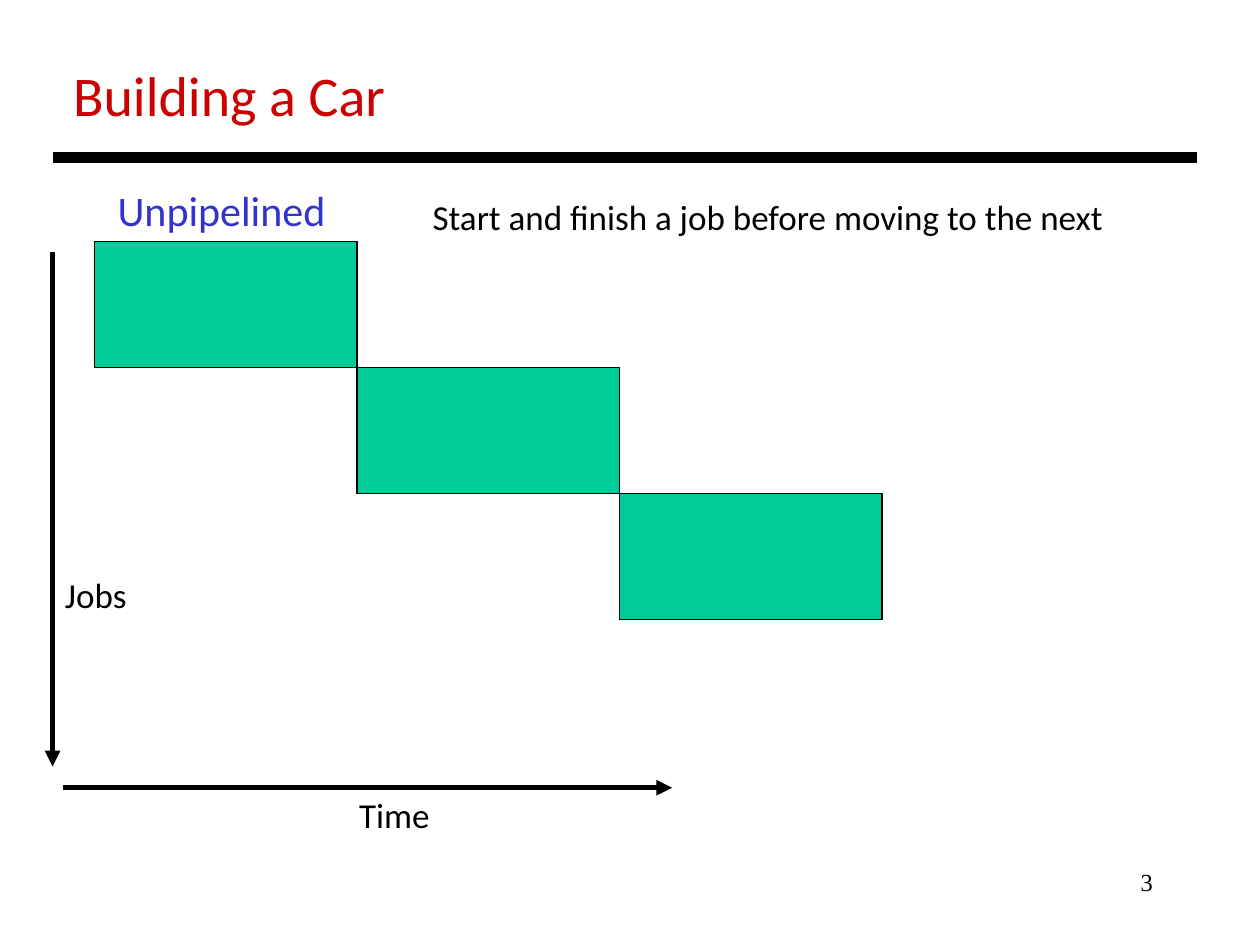
from pptx import Presentation
from pptx.dml.color import RGBColor
from pptx.enum.shapes import MSO_CONNECTOR as Link, MSO_SHAPE as Form
from pptx.enum.text import MSO_ANCHOR as Anchor, PP_ALIGN as Align
from pptx.oxml.ns import qn
from pptx.util import Cm, Pt
from lxml.etree import SubElement as add_node


def color(code):
    return RGBColor.from_string(code)


class Page:
    font = "Calibri"
    ink = "000000"
    fill = "00CC99"

    def __init__(self, slide):
        self.slide = slide
        self.shapes = slide.shapes

    def set_text(self, shape, text, size, ink=None, font=None, align=Align.LEFT, wrap=False):
        frame = shape.text_frame
        frame.text = text
        frame.word_wrap = wrap
        frame.vertical_anchor = Anchor.TOP
        para = frame.paragraphs[0]
        para.alignment = align
        style = {"name": font or self.font, "size": Pt(size), "bold": False}
        for key, value in style.items():
            setattr(para.runs[0].font, key, value)
        para.runs[0].font.color.rgb = color(ink or self.ink)

    def title(self, text, x, y, w, h, size, ink):
        shape = self.shapes.title
        box = {"left": x, "top": y, "width": w, "height": h}
        for key, value in box.items():
            setattr(shape, key, Cm(value))
        self.set_text(shape, text, size, ink)

    def label(self, text, x, y, w, h, size=20, **style):
        box = self.shapes.add_textbox(Cm(x), Cm(y), Cm(w), Cm(h))
        self.set_text(box, text, size, **style)

    def block(self, x, y, w, h):
        shape = self.shapes.add_shape(Form.RECTANGLE, Cm(x), Cm(y), Cm(w), Cm(h))
        shape.shadow.inherit = False
        shape.fill.solid()
        shape.fill.fore_color.rgb = color(self.fill)
        shape.line.color.rgb = color(self.ink)
        shape.line.width = Pt(0.75)

    def line(self, x1, y1, x2, y2, width, arrow=False):
        line = self.shapes.add_connector(Link.STRAIGHT, Cm(x1), Cm(y1), Cm(x2), Cm(y2))
        line.line.color.rgb = color(self.ink)
        line.line.width = Pt(width)
        props = line._element.spPr
        if arrow:
            add_node(props.find(qn("a:ln")), qn("a:tailEnd"), type="triangle")
        add_node(props, qn("a:effectLst"))


def main():
    deck = Presentation()
    deck.slide_width, deck.slide_height = Cm(25.4), Cm(19.05)
    page = Page(deck.slides.add_slide(deck.slide_layouts[5]))

    # Heading and rule
    page.title("Building a Car", 1.22, 1.09, 6.88, 1.63, 32, "CC0000")
    page.line(1.06, 3.18, 24.13, 3.18, 6)

    # Captions
    page.label("Unpipelined", 2.12, 3.6, 4.75, 1.27, 24, ink="3333CC")
    page.label("Start and finish a job before moving to the next", 8.47, 3.81, 14.15, 1.12)

    # Jobs, each starting where the last one ends
    wide, high = 5.29, 2.54
    for step in range(3):
        page.block(1.91 + step * wide, 4.87 + step * high, wide, high)

    # Axes
    page.line(1.06, 5.08, 1.06, 15.45, 3, arrow=True)
    page.label("Jobs", 1.06, 11.43, 1.75, 1.12)
    page.line(1.27, 15.88, 13.55, 15.88, 3, arrow=True)
    page.label("Time", 6.99, 15.88, 1.96, 1.12)

    # Page number
    page.label("3", 18.2, 17.36, 5.29, 1.27, 14,
               font="Times New Roman", align=Align.RIGHT, wrap=True)

    deck.save("out.pptx")


if __name__ == "__main__":
    main()
